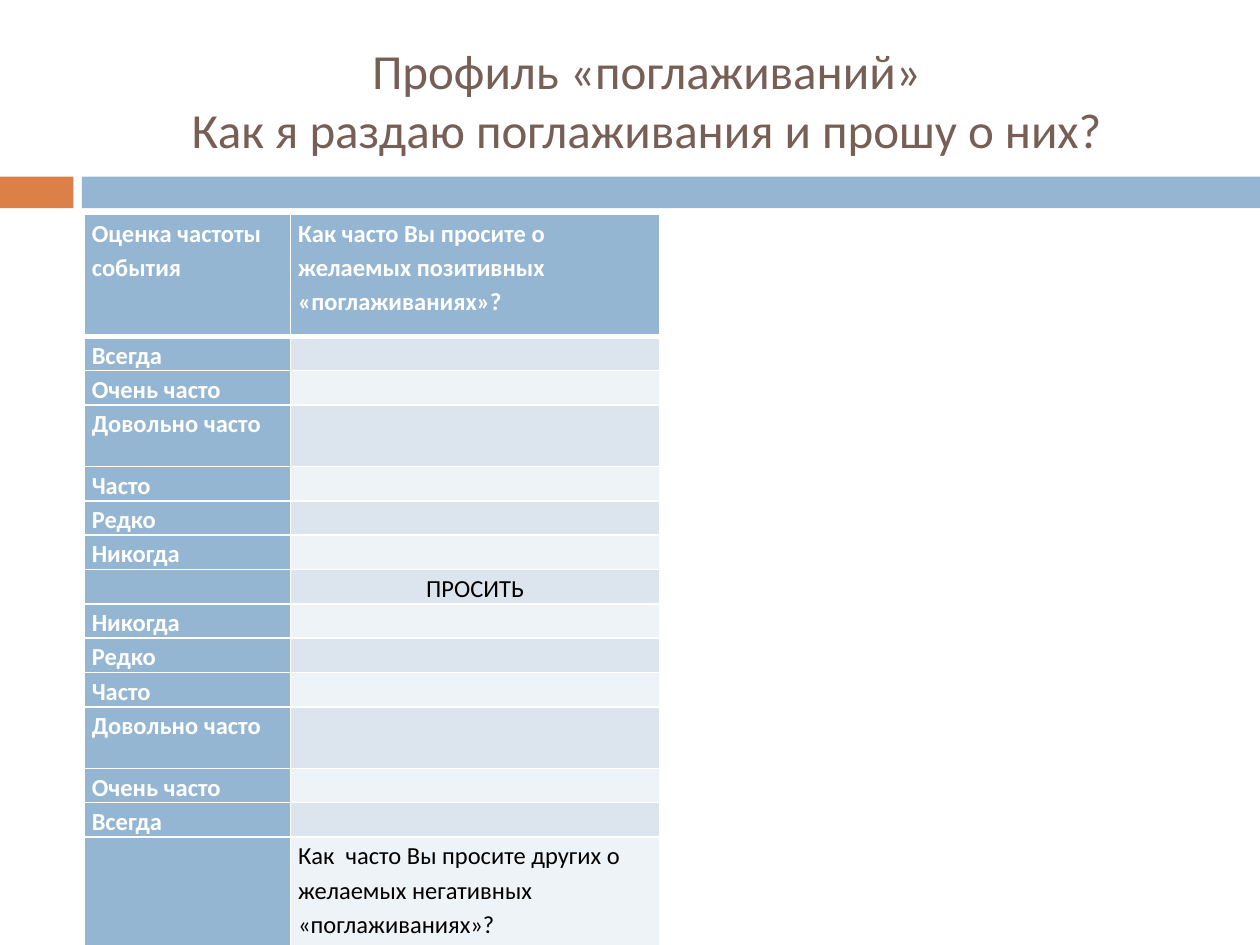
from lxml import etree
from pptx import Presentation
from pptx import util as u
from pptx.dml.color import RGBColor
from pptx.enum import shapes, text
from pptx.oxml.ns import qn

BLUE, ORANGE, BROWN, WHITE, BLACK = "94B6D2", "DD8047", "775F55", "FFFFFF", "000000"
BANDS = ("DCE5EE", "EEF3F7")
SCALE = ["Всегда", "Очень часто", "Довольно часто", "Часто", "Редко", "Никогда"]
HEAD = ("Оценка частоты события", "Как часто Вы просите о желаемых позитивных «поглаживаниях»?")
FOOT = ("", "Как  часто Вы просите других о желаемых негативных «поглаживаниях»?")
SHORT, MID, TALL = 0.61, 1.24, 2.46


def paint(fill, color):
    fill.solid()
    fill.fore_color.rgb = RGBColor.from_string(color)


def write(frame, words, size=14, color=BLACK, bold=False, align=text.PP_ALIGN.LEFT, gap=None):
    para = frame.paragraphs[0]
    para.text = words
    para.alignment = align
    para.line_spacing = gap
    for run in para.runs:
        run.font.name = "Calibri"
        run.font.size = u.Pt(size)
        run.font.bold = bold
        run.font.color.rgb = RGBColor.from_string(color)
    # Line breaks and empty paragraphs need the size as well
    for mark in para._p.findall(qn("a:br")):
        etree.SubElement(mark, qn("a:rPr"), sz=str(size * 100))
    if not words:
        etree.SubElement(para._p, qn("a:endParaRPr"), sz=str(size * 100))


def bar(slide, left, width, color):
    box = slide.shapes.add_shape(
        shapes.MSO_SHAPE.RECTANGLE, u.Cm(left), u.Cm(3.56), u.Cm(width), u.Cm(0.64))
    box.shadow.inherit = False
    paint(box.fill, color)
    box.line.fill.background()


def title(slide):
    head = slide.shapes.title
    head.left, head.top, head.width, head.height = map(u.Cm, (1.7, 0.64, 22.66, 2.74))
    head.text_frame.vertical_anchor = text.MSO_ANCHOR.MIDDLE
    write(head.text_frame, "Профиль «поглаживаний»\nКак я раздаю поглаживания и прошу о них?",
          size=28, color=BROWN, align=text.PP_ALIGN.CENTER)


def border(cell, base):
    """Draw white cell borders; base is the width of the bottom one in points."""
    props = cell._tc.get_or_add_tcPr()
    for spot, (side, width) in enumerate(zip("LRTB", (1, 1, 1, base))):
        line = etree.Element(qn(f"a:ln{side}"), w=str(u.Pt(width)))
        fill = etree.SubElement(line, qn("a:solidFill"))
        etree.SubElement(fill, qn("a:srgbClr"), val=WHITE)
        props.insert(spot, line)


def fill_cell(cell, words, back, base=1, **style):
    cell.margin_left = cell.margin_right = u.Cm(0.15)
    cell.margin_top = cell.margin_bottom = 0
    write(cell.text_frame, words, gap=1.15, **style)
    paint(cell.fill, back)
    border(cell, base)


def profile(slide):
    rows = [HEAD, *((word, "") for word in SCALE), ("", "ПРОСИТЬ"),
            *((word, "") for word in reversed(SCALE)), FOOT]
    tall = {HEAD: TALL, FOOT: TALL, ("Довольно часто", ""): MID}
    high = [tall.get(row, SHORT) for row in rows]
    wide = (4.16, 7.44)
    grid = slide.shapes.add_table(len(rows), 2, u.Cm(1.7), u.Cm(4.32),
                                  u.Cm(sum(wide)), u.Cm(sum(high))).table
    for col, width in zip(grid.columns, wide):
        col.width = u.Cm(width)
    for i, (label, note) in enumerate(rows):
        grid.rows[i].height = u.Cm(high[i])
        top = i == 0
        base = 3 if top else 1
        fill_cell(grid.cell(i, 0), label, BLUE, base, color=WHITE, bold=True)
        align = text.PP_ALIGN.CENTER if note == "ПРОСИТЬ" else text.PP_ALIGN.LEFT
        fill_cell(grid.cell(i, 1), note, BLUE if top else BANDS[(i - 1) % 2], base,
                  color=WHITE if top else BLACK, bold=top, align=align)


def main():
    deck = Presentation()
    deck.slide_width, deck.slide_height = u.Cm(25.4), u.Cm(19.05)
    slide = deck.slides.add_slide(deck.slide_layouts[5])
    bar(slide, 0, 1.48, ORANGE)
    bar(slide, 1.65, 23.75, BLUE)
    title(slide)
    profile(slide)
    deck.save("out.pptx")


if __name__ == "__main__":
    main()
